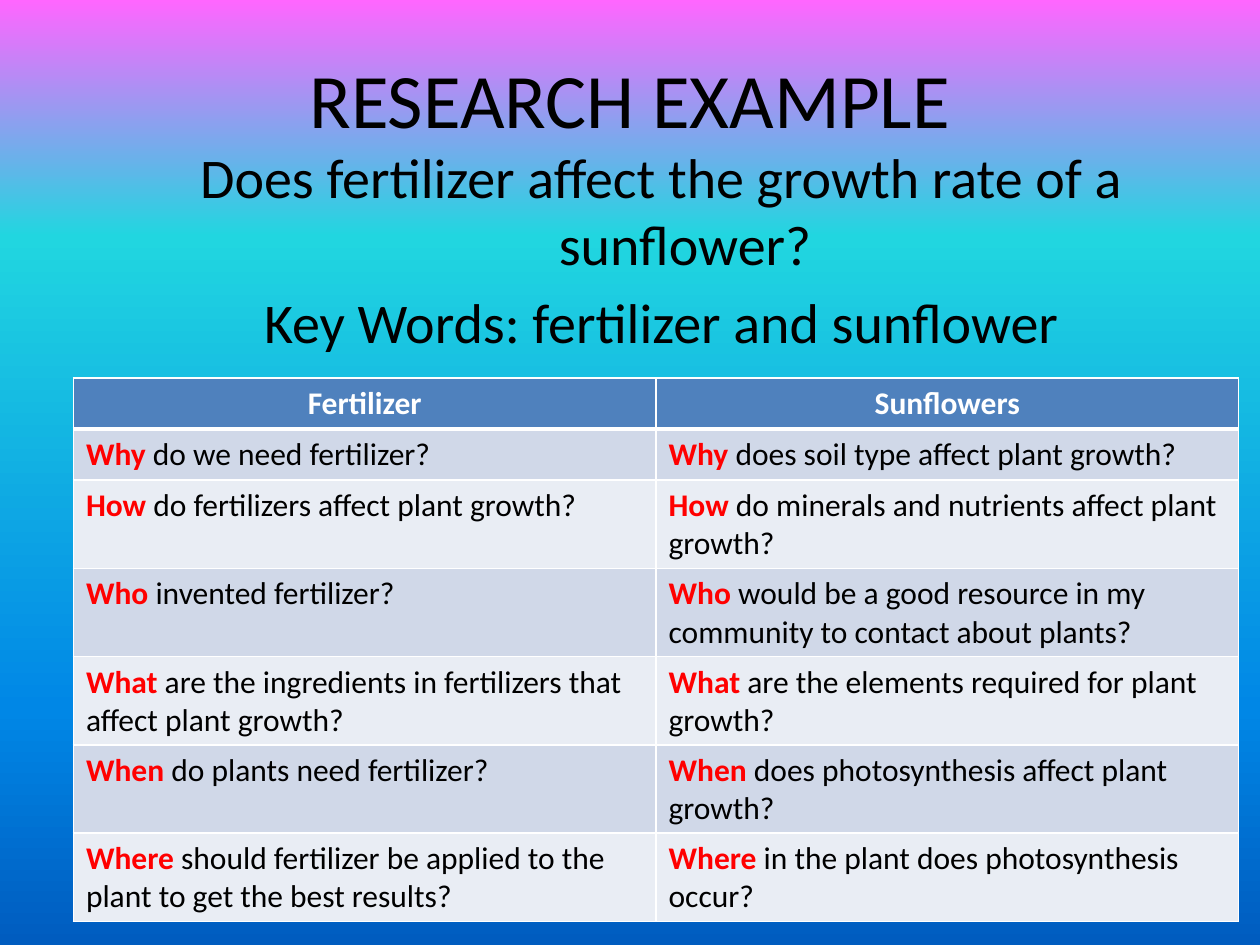
from dataclasses import dataclass

from lxml import etree
from pptx import Presentation
from pptx.dml.color import RGBColor
from pptx.enum.text import MSO_ANCHOR, PP_ALIGN
from pptx.oxml.ns import qn
from pptx.util import Cm, Pt

CENTER = PP_ALIGN.CENTER
LEFT = PP_ALIGN.LEFT
TOP = MSO_ANCHOR.TOP
MIDDLE = MSO_ANCHOR.MIDDLE


@dataclass(frozen=True)
class Theme:
    font: str = "Calibri"
    title: int = 44
    body: int = 32
    cell: int = 18
    ink: str = "000000"
    light: str = "FFFFFF"
    accent: str = "FF0000"
    head: str = "4F81BD"
    bands: tuple = ("D0D8E8", "E9EDF4")
    sky: tuple = ((0, "FF66FF"), (25, "21D6E0"), (75, "0087E6"), (100, "005CBF"))


HEADS = ("Fertilizer", "Sunflowers")
ROWS = (
    ("Why", "do we need fertilizer?", "does soil type affect plant growth?"),
    ("How", "do fertilizers affect plant growth?",
     "do minerals and nutrients affect plant growth?"),
    ("Who", "invented fertilizer?",
     "would be a good resource in my community to contact about plants?"),
    ("What", "are the ingredients in fertilizers that affect plant growth?",
     "are the elements required for plant growth?"),
    ("When", "do plants need fertilizer?",
     "does photosynthesis affect plant growth?"),
    ("Where", "should fertilizer be applied to the plant to get the best results?",
     "in the plant does photosynthesis occur?"),
)


class Deck:
    def __init__(self, theme):
        self.theme = theme
        self.prs = Presentation()
        self.prs.slide_width, self.prs.slide_height = Cm(25.4), Cm(19.05)
        self.slide = self.prs.slides.add_slide(self.prs.slide_layouts[6])

    def sky(self):
        """Fill the background with the gradient, top to bottom."""
        fill = self.slide.background.fill
        fill.gradient()
        fill.gradient_angle = 270
        stops = next(self.slide.background._cSld.iter(qn("a:gsLst")))
        for stop in list(stops):
            stops.remove(stop)
        for place, color in self.theme.sky:
            stop = etree.SubElement(stops, qn("a:gs"), pos=str(place * 1000))
            etree.SubElement(stop, qn("a:srgbClr"), val=color)

    def run(self, para, text, size, color, bold=False):
        run = para.add_run()
        run.text = text
        font = run.font
        font.name, font.size, font.bold = self.theme.font, Pt(size), bold
        font.color.rgb = RGBColor.from_string(color)

    def text(self, box, lines, size, anchor=TOP, gap=0, hang=0):
        """Add centred paragraphs with a hanging indent of hang cm."""
        frame = self.slide.shapes.add_textbox(*map(Cm, box)).text_frame
        frame.word_wrap = True
        frame.vertical_anchor = anchor
        for i, line in enumerate(lines):
            para = frame.add_paragraph() if i else frame.paragraphs[0]
            para.alignment = CENTER
            para.space_before = Pt(gap)
            if hang:
                props = para._p.get_or_add_pPr()
                props.set("marL", str(Cm(hang)))
                props.set("indent", str(-Cm(hang)))
            self.run(para, line, size, self.theme.ink)

    def edge(self, cell, base):
        """Draw white cell borders, with the bottom one base points wide."""
        props = cell._tc.get_or_add_tcPr()
        for i, (side, width) in enumerate(
                (("lnL", 1), ("lnR", 1), ("lnT", 1), ("lnB", base))):
            line = etree.Element(qn(f"a:{side}"), w=str(Pt(width)))
            fill = etree.SubElement(line, qn("a:solidFill"))
            etree.SubElement(fill, qn("a:srgbClr"), val=self.theme.light)
            props.insert(i, line)

    def cell(self, cell, fill, runs, align=LEFT, base=1):
        cell.fill.solid()
        cell.fill.fore_color.rgb = RGBColor.from_string(fill)
        self.edge(cell, base)
        para = cell.text_frame.paragraphs[0]
        para.alignment = align
        for text, color, bold in runs:
            self.run(para, text, self.theme.cell, color, bold)

    def table(self, left, top, width, pitch, heads, rows):
        look = self.theme
        count = len(rows) + 1
        grid = self.slide.shapes.add_table(
            count, len(heads), Cm(left), Cm(top), Cm(width), Cm(pitch * count)).table
        for col, head in enumerate(heads):
            self.cell(grid.cell(0, col), look.head,
                      [(head, look.light, True)], CENTER, 3)
        for row, (word, *tails) in enumerate(rows, 1):
            for col, tail in enumerate(tails):
                cell = grid.cell(row, col)
                self.cell(cell, look.bands[(row - 1) % 2],
                          [(word, look.accent, True), (f" {tail}", look.ink, False)],
                          base=1)
                if row == 1:
                    cell._tc.tcPr.find(qn("a:lnT")).set("w", str(Pt(3)))


def main():
    theme = Theme()
    deck = Deck(theme)
    deck.sky()
    deck.text((1.27, 0.76, 22.86, 2.41), ["RESEARCH EXAMPLE"], theme.title, MIDDLE)
    deck.text((1.27, 2.74, 24.13, 16.31),
              ["Does fertilizer affect the growth rate of a sunflower?",
               "Key Words: fertilizer and sunflower"],
              theme.body, gap=6, hang=0.95)
    deck.table(1.48, 7.62, 23.49, 1.03, HEADS, ROWS)
    deck.prs.save("out.pptx")


if __name__ == "__main__":
    main()
